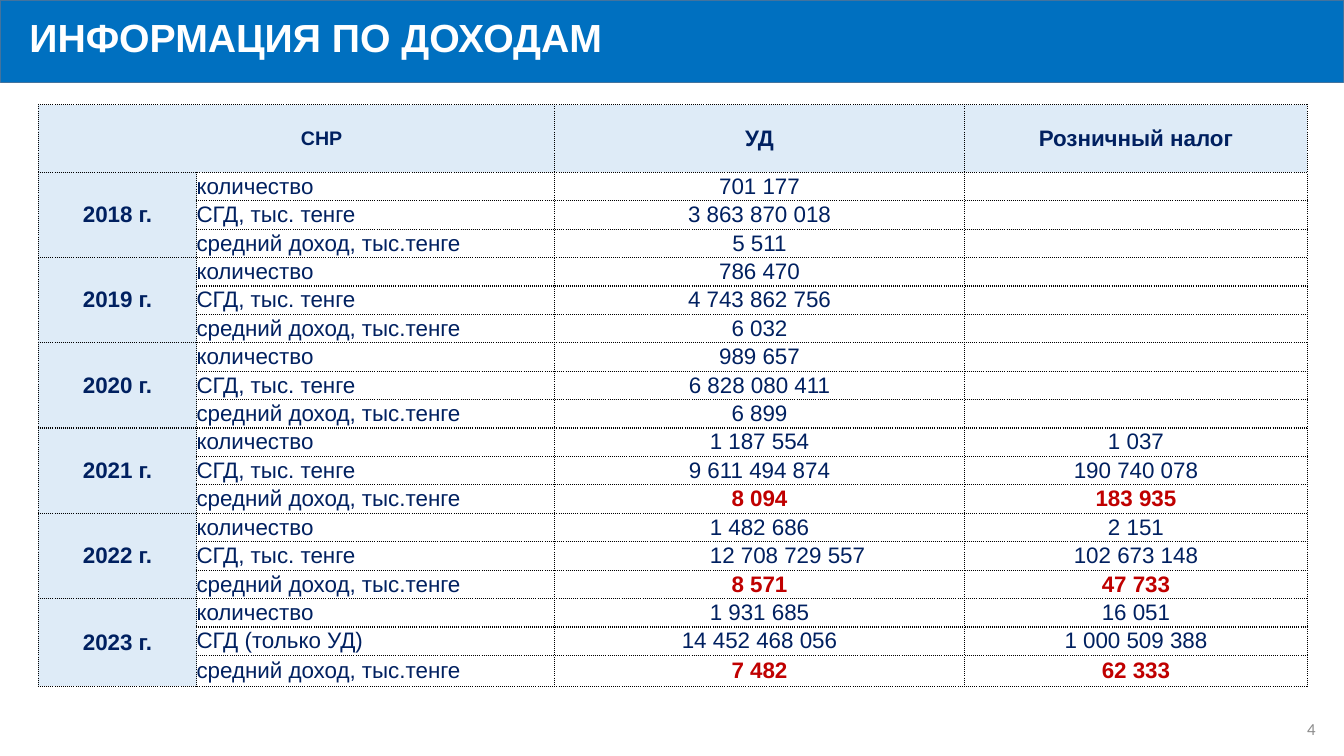
from dataclasses import dataclass

import lxml.etree
import pptx
import pptx.dml.color
import pptx.enum.shapes
import pptx.enum.text
import pptx.oxml.ns
import pptx.util

Pt = pptx.util.Pt
Align = pptx.enum.text.PP_ALIGN
Anchor = pptx.enum.text.MSO_ANCHOR
qn = pptx.oxml.ns.qn


@dataclass(frozen=True)
class Theme:
    font: str = "Arial"
    foot: str = "Calibri"
    bar: str = "0070C0"
    edge: str = "43739E"
    white: str = "FFFFFF"
    tint: str = "DEEBF7"
    navy: str = "002060"
    red: str = "C00000"
    grey: str = "8C8C8C"
    rule: str = "000000"
    title: int = 28
    body: int = 16
    small: int = 14
    page: int = 12


THEME = Theme()
COLS = (113, 255.6, 293, 244.8)
HEAD, ROW, LAST = 48.2, 20.3, 22
COUNT, SUM, MEAN = "количество", "СГД, тыс. тенге", "средний доход, тыс.тенге"
YEARS = (
    ("2018 г.", ((COUNT, "701 177", ""), (SUM, "3 863 870 018", ""),
                 (MEAN, "5 511", ""))),
    ("2019 г.", ((COUNT, "786 470", ""), (SUM, "4 743 862 756", ""),
                 (MEAN, "6 032", ""))),
    ("2020 г.", ((COUNT, "989 657", ""), (SUM, "6 828 080 411", ""),
                 (MEAN, "6 899", ""))),
    ("2021 г.", ((COUNT, "1 187 554", "1 037"),
                 (SUM, "9 611 494 874", "190 740 078"),
                 (MEAN, "8 094", "183 935"))),
    ("2022 г.", ((COUNT, "1 482 686", "2 151"),
                 (SUM, "12 708 729 557", "102 673 148"),
                 (MEAN, "8 571", "47 733"))),
    ("2023 г.", ((COUNT, "1 931 685", "16 051"),
                 ("СГД (только УД)", "14 452 468 056", "1 000 509 388"),
                 (MEAN, "7 482", "62 333"))),
)


def rgb(code):
    return pptx.dml.color.RGBColor.from_string(code)


def add_run(para, text, size, color, bold=False, font=THEME.font):
    run = para.add_run()
    run.text = text
    run.font.name = font
    run.font.size = Pt(size)
    run.font.bold = bold
    run.font.color.rgb = rgb(color)


def set_frame(frame, left=7.2):
    frame.word_wrap = True
    frame.auto_size = pptx.enum.text.MSO_AUTO_SIZE.NONE
    frame.vertical_anchor = Anchor.MIDDLE
    frame.margin_left = Pt(left)


def add_title(slide, text):
    title = slide.shapes.title
    title.left, title.top = Pt(0), Pt(5.8)
    title.width, title.height = Pt(959), Pt(44.6)
    set_frame(title.text_frame, 21)
    para = title.text_frame.paragraphs[0]
    para.alignment = Align.LEFT
    para.line_spacing = 0.9
    add_run(para, text, THEME.title, THEME.white, True)
    return title


def add_bar(slide, title):
    kind = pptx.enum.shapes.MSO_SHAPE.RECTANGLE
    bar = slide.shapes.add_shape(kind, Pt(0.5), Pt(0), Pt(959), Pt(59))
    bar.shadow.inherit = False
    bar.fill.solid()
    bar.fill.fore_color.rgb = rgb(THEME.bar)
    bar.line.color.rgb = rgb(THEME.edge)
    bar.line.width = Pt(1)
    title.element.addprevious(bar.element)


def add_edges(cell):
    props = cell._tc.get_or_add_tcPr()
    for side in ("a:lnL", "a:lnR", "a:lnT", "a:lnB"):
        line = lxml.etree.SubElement(props, qn(side), w=str(Pt(1)))
        fill = lxml.etree.SubElement(line, qn("a:solidFill"))
        lxml.etree.SubElement(fill, qn("a:srgbClr"), val=THEME.rule)
        lxml.etree.SubElement(line, qn("a:prstDash"), val="sysDot")


def style_cell(cell, fill):
    add_edges(cell)
    cell.fill.solid()
    cell.fill.fore_color.rgb = rgb(fill)
    cell.vertical_anchor = Anchor.MIDDLE
    cell.margin_left = cell.margin_right = Pt(0)
    cell.margin_top = cell.margin_bottom = Pt(0)


def fill_cell(cell, text, align=Align.CENTER, size=THEME.body,
              color=THEME.navy, bold=False, left=0):
    para = cell.text_frame.paragraphs[0]
    para.alignment = align
    cell.margin_left = Pt(left)
    if text:
        add_run(para, text, size, color, bold)


def add_grid(slide):
    rows = [HEAD] + [ROW] * (3 * len(YEARS) - 1) + [LAST]
    shape = slide.shapes.add_table(len(rows), len(COLS), Pt(27.4), Pt(74.9),
                                   Pt(sum(COLS)), Pt(sum(rows)))
    grid = shape.table
    for col, width in zip(grid.columns, COLS):
        col.width = Pt(width)
    for y, height in enumerate(rows):
        grid.rows[y].height = Pt(height)
        for x in range(len(COLS)):
            tint = y == 0 or x == 0
            style_cell(grid.cell(y, x), THEME.tint if tint else THEME.white)
    return grid


def fill_head(grid):
    grid.cell(0, 0).merge(grid.cell(0, 1))
    fill_cell(grid.cell(0, 0), "СНР", size=THEME.small, bold=True, left=36)
    fill_cell(grid.cell(0, 2), "УД", bold=True)
    fill_cell(grid.cell(0, 3), "Розничный налог", bold=True)


def fill_year(grid, top, year, lines):
    grid.cell(top, 0).merge(grid.cell(top + 2, 0))
    fill_cell(grid.cell(top, 0), year, bold=True)
    for y, (label, *sums) in enumerate(lines, top):
        fill_cell(grid.cell(y, 1), label, Align.LEFT)
        hot = label == MEAN and all(sums)
        for x, text in enumerate(sums, 2):
            fill_cell(grid.cell(y, x), text, bold=hot,
                      color=THEME.red if hot else THEME.navy,
                      left=40 if text == "12 708 729 557" else 0)


def size_blanks(grid):
    for cell in grid.iter_cells():
        if not cell.text_frame.text:
            para = cell.text_frame.paragraphs[0]
            lxml.etree.SubElement(para._p, qn("a:endParaRPr"),
                                  sz=str(THEME.body * 100))


def add_page(slide, text):
    box = slide.shapes.add_textbox(Pt(730.8), Pt(506.2), Pt(216), Pt(28.8))
    set_frame(box.text_frame)
    para = box.text_frame.paragraphs[0]
    para.alignment = Align.RIGHT
    add_run(para, text, THEME.page, THEME.grey, font=THEME.foot)


def main():
    deck = pptx.Presentation()
    deck.slide_width, deck.slide_height = Pt(960), Pt(540)
    slide = deck.slides.add_slide(deck.slide_layouts[5])
    title = add_title(slide, "ИНФОРМАЦИЯ ПО ДОХОДАМ")
    add_bar(slide, title)
    grid = add_grid(slide)
    fill_head(grid)
    for i, (year, lines) in enumerate(YEARS):
        fill_year(grid, 1 + 3 * i, year, lines)
    size_blanks(grid)
    add_page(slide, "4")
    deck.save("out.pptx")


if __name__ == "__main__":
    main()
